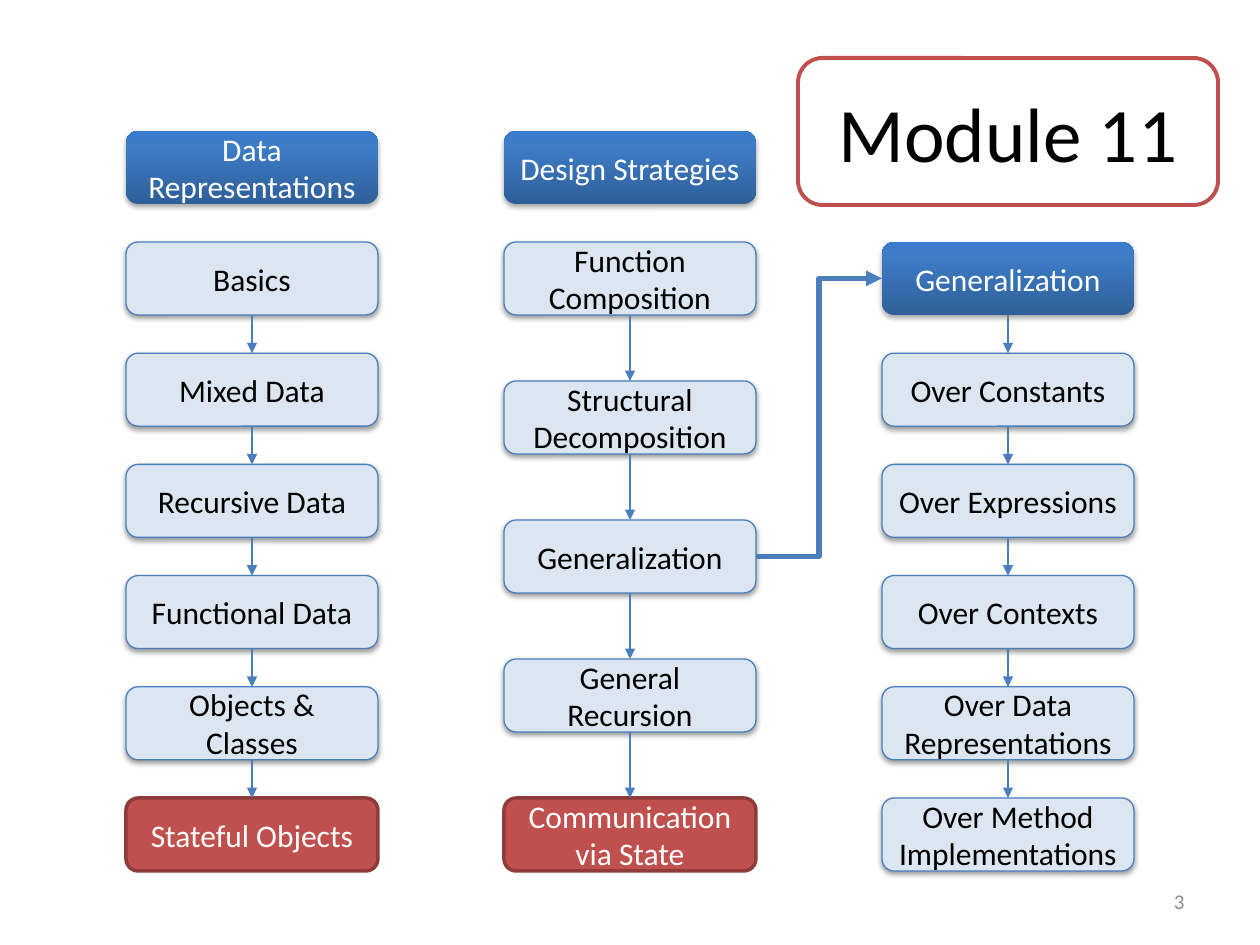
from copy import deepcopy

from lxml import etree
from pptx import Presentation
from pptx.dml.color import RGBColor
from pptx.enum.shapes import MSO_CONNECTOR, MSO_SHAPE
from pptx.enum.text import MSO_ANCHOR, PP_ALIGN
from pptx.oxml.ns import qn
from pptx.util import Emu, Pt

ROUND = MSO_SHAPE.ROUNDED_RECTANGLE
STRAIGHT, ELBOW = MSO_CONNECTOR.STRAIGHT, MSO_CONNECTOR.ELBOW
MIDDLE = MSO_ANCHOR.MIDDLE
CENTER, RIGHT = PP_ALIGN.CENTER, PP_ALIGN.RIGHT
TOP_SIDE, LEFT_SIDE, BOTTOM_SIDE, RIGHT_SIDE = range(4)

SCALE = 914400 / 126
BLUE, RED = "4B7EBC", "C0504D"
BLACK, WHITE, GRAY = "000000", "FFFFFF", "8C8C8C"
BOX_W, BOX_H = 252, 73
HEAD_Y, TOP, BOTTOM = 131, 242, 798

DATA = ["Basics", "Mixed Data", "Recursive Data", "Functional Data",
        "Objects & Classes", "Stateful Objects"]
DESIGN = ["Function Composition", "Structural Decomposition",
          "Generalization", "General Recursion", "Communication via State"]
GENERAL = ["Generalization", "Over Constants", "Over Expressions",
           "Over Contexts", "Over Data Representations",
           "Over Method Implementations"]


def px(n):
    return Emu(round(n * SCALE))


def rgb(code):
    return RGBColor.from_string(code)


def write(shape, text, size, color, align=CENTER):
    frame = shape.text_frame
    frame.word_wrap = True
    frame.vertical_anchor = MIDDLE
    para = frame.paragraphs[0]
    para.alignment = align
    run = para.add_run()
    run.text = text
    run.font.size = Pt(size)
    run.font.name = "Calibri"
    run.font.color.rgb = rgb(color)


def outline(shape, color, width):
    shape.line.color.rgb = rgb(color)
    shape.line.width = Pt(width)


def shade(shape, alpha, dist):
    """Add a soft shadow that falls straight down."""
    effects = shape._element.spPr.find(qn("a:effectLst"))
    outer = etree.SubElement(effects, qn("a:outerShdw"), blurRad="40000",
                             dist=str(dist), dir="5400000", rotWithShape="0")
    color = etree.SubElement(outer, qn("a:srgbClr"), val=BLACK)
    etree.SubElement(color, qn("a:alpha"), val=str(alpha * 1000))


def blend(shape):
    """Fill from dark blue at the foot to light blue above."""
    shape.fill.gradient()
    shape.fill.gradient_angle = 90
    stops = shape._element.spPr.find(qn("a:gradFill")).find(qn("a:gsLst"))
    stops.append(deepcopy(stops[-1]))
    shades = [(0, "2F5F99"), (0.8, "3D7CC7"), (1, "3A7CCB")]
    for stop, (pos, color) in zip(shape.fill.gradient_stops, shades):
        stop.position = pos
        stop.color.rgb = rgb(color)


def block(slide, x, y, w, h):
    shape = slide.shapes.add_shape(ROUND, px(x), px(y), px(w), px(h))
    shape.shadow.inherit = False
    return shape


def header(slide, x, y, text):
    shape = block(slide, x, y, BOX_W, BOX_H)
    blend(shape)
    shape.line.fill.background()
    shade(shape, 35, 23000)
    write(shape, text, 18, WHITE)
    return shape


def topic(slide, x, y, text):
    shape = block(slide, x, y, BOX_W, BOX_H)
    shape.fill.solid()
    shape.fill.fore_color.rgb = rgb("DCE6F2")
    outline(shape, BLUE, 0.75)
    shade(shape, 38, 20000)
    write(shape, text, 18, BLACK)
    return shape


def focus(slide, x, y, text):
    """Draw the topic that this module covers."""
    shape = block(slide, x, y, BOX_W, BOX_H)
    shape.fill.solid()
    shape.fill.fore_color.rgb = rgb(RED)
    outline(shape, "8E3B39", 2)
    write(shape, text, 18, WHITE)
    return shape


def arrow(slide, kind, start, side, end, end_side, width):
    line = slide.shapes.add_connector(kind, 0, 0, 0, 0)
    line.begin_connect(start, side)
    line.end_connect(end, end_side)
    outline(line, BLUE, width)
    etree.SubElement(line.line._get_or_add_ln(), qn("a:tailEnd"),
                     type="triangle")
    etree.SubElement(line._element.spPr, qn("a:effectLst"))


def column(slide, x, top, bottom, names, first=topic, last=topic):
    """Spread the boxes evenly from top to bottom and chain them."""
    step = (bottom - top) / (len(names) - 1)
    kinds = [first] + [topic] * (len(names) - 2) + [last]
    boxes = [kind(slide, x, top + i * step, name)
             for i, (kind, name) in enumerate(zip(kinds, names))]
    for upper, lower in zip(boxes, boxes[1:]):
        arrow(slide, STRAIGHT, upper, BOTTOM_SIDE, lower, TOP_SIDE, 0.75)
    return boxes


def title(slide, x, y, w, h):
    shape = block(slide, x, y, w, h)
    shape.fill.background()
    outline(shape, RED, 2.25)
    write(shape, "Module 11", 44, BLACK)


def number(slide, x, y, w, h):
    shape = slide.shapes.add_textbox(px(x), px(y), px(w), px(h))
    write(shape, "3", 12, GRAY, RIGHT)


def main():
    deck = Presentation()
    deck.slide_width, deck.slide_height = px(1260), px(945)
    slide = deck.slides.add_slide(deck.slide_layouts[6])

    header(slide, 126, HEAD_Y, "Data Representations")
    column(slide, 126, TOP, BOTTOM, DATA, last=focus)
    header(slide, 504, HEAD_Y, "Design Strategies")
    design = column(slide, 504, TOP, BOTTOM, DESIGN, last=focus)
    general = column(slide, 882, TOP, BOTTOM, GENERAL, first=header)
    arrow(slide, ELBOW, design[2], RIGHT_SIDE, general[0], LEFT_SIDE, 3)

    title(slide, 798, 58, 420, 147)
    number(slide, 903, 876, 294, 50)
    deck.save("out.pptx")


if __name__ == "__main__":
    main()
